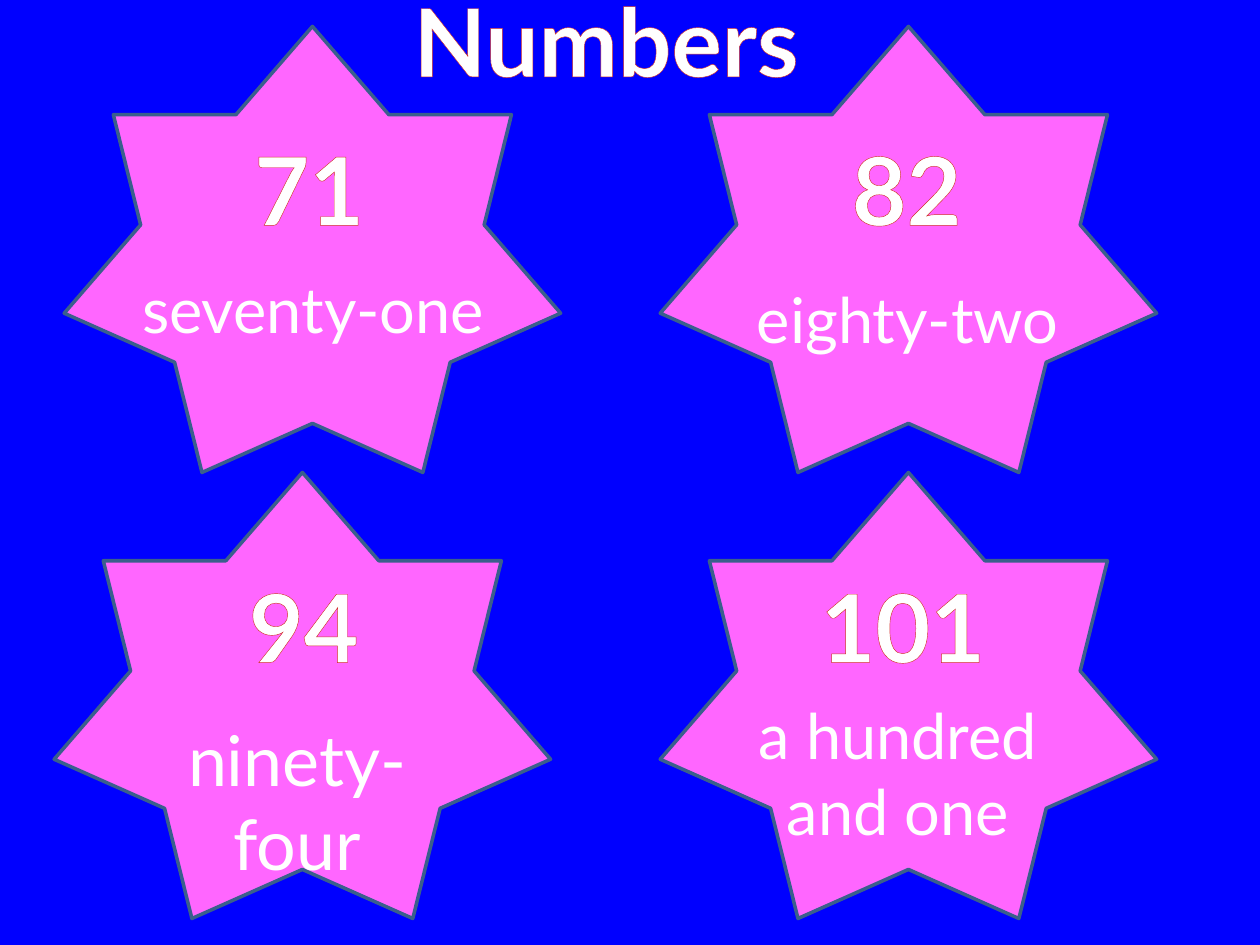
from lxml import etree
from pptx import Presentation
from pptx.dml.color import RGBColor
from pptx.enum.shapes import MSO_SHAPE
from pptx.enum.text import MSO_ANCHOR, MSO_AUTO_SIZE, PP_ALIGN
from pptx.oxml.ns import qn
from pptx.util import Inches, Pt

STAR = MSO_SHAPE.STAR_7_POINT
TOP = MSO_ANCHOR.TOP
GROW = MSO_AUTO_SIZE.SHAPE_TO_FIT_TEXT
CENTER = PP_ALIGN.CENTER

FONT = "Lato"
BLUE, PINK, STEEL = "0000FF", "FF66FF", "3A5F8C"
WHITE, RED = "FFFFFF", "D02F2A"
STAR_WIDTH, STAR_HEIGHT = 3.94, 3.54
HEADING_HEIGHT = 1.01
HEADING = {"size": 54, "bold": True, "outline": RED, "wrap": False}

# Star corner, then number (left, top, width) and words (left, top, width, height) within it
STARS = [
    ((0.51, 0.21), "71", (1.36, 0.78, 1.17), "seventy-one", (0.32, 1.89, 3.31, 1.31), 36),
    ((5.24, 0.21), "82", (1.25, 0.78, 1.41), "eighty-two", (0.47, 1.97, 2.99, 1.31), 36),
    ((0.43, 3.75), "94", (1.24, 0.71, 1.48), "ninety-four", (0.55, 1.89, 2.76, 1.45), 40),
    ((5.24, 3.75), "101", (1.13, 0.71, 1.59), "a hundred and one", (0.31, 1.73, 3.15, 1.31), 36),
]


def color(value):
    """Turn a hex string into a colour."""
    return RGBColor.from_string(value)


def place(shape, left, top, width, height):
    """Move and size a shape, in inches."""
    shape.left, shape.top = Inches(left), Inches(top)
    shape.width, shape.height = Inches(width), Inches(height)


def write(shape, text, size=36, bold=False, outline=None, wrap=True):
    """Fill a shape with one centred white line of text."""
    frame = shape.text_frame
    frame.word_wrap = wrap
    frame.auto_size = GROW
    frame.vertical_anchor = TOP
    paragraph = frame.paragraphs[0]
    paragraph.alignment = CENTER
    run = paragraph.add_run()
    run.text = text
    run.font.name = FONT
    run.font.size = Pt(size)
    run.font.bold = bold
    run.font.color.rgb = color(WHITE)
    if outline:
        line = etree.Element(qn("a:ln"), w=str(Pt(1.93)))
        fill = etree.SubElement(line, qn("a:solidFill"))
        etree.SubElement(fill, qn("a:srgbClr"), val=outline)
        run.font._element.insert(0, line)


def add_text(slide, box, text, **style):
    """Add a text box with formatted text."""
    write(slide.shapes.add_textbox(*map(Inches, box)), text, **style)


def add_title(slide, box, text):
    """Place and format the slide title."""
    title = slide.shapes.title
    place(title, *box)
    write(title, text, **HEADING)


def add_number_star(slide, corner, number, number_box, words, words_box, words_size):
    """Add a star holding a number and its name in words."""
    left, top = corner
    star = slide.shapes.add_shape(
        STAR, Inches(left), Inches(top), Inches(STAR_WIDTH), Inches(STAR_HEIGHT))
    star.shadow.inherit = False
    star.fill.solid()
    star.fill.fore_color.rgb = color(PINK)
    star.line.color.rgb = color(STEEL)
    star.line.width = Pt(2)
    dx, dy, width = number_box
    add_text(slide, (left + dx, top + dy, width, HEADING_HEIGHT), number, **HEADING)
    dx, dy, width, height = words_box
    add_text(slide, (left + dx, top + dy, width, height), words, size=words_size)


def main():
    """Build the numbers slide."""
    deck = Presentation()
    deck.slide_width, deck.slide_height = Inches(10), Inches(7.5)
    slide = deck.slides.add_slide(deck.slide_layouts[5])
    slide.background.fill.solid()
    slide.background.fill.fore_color.rgb = color(BLUE)
    add_title(slide, (2.87, -0.19, 3.88, HEADING_HEIGHT), "Numbers")
    for star in STARS:
        add_number_star(slide, *star)
    deck.save("out.pptx")


if __name__ == "__main__":
    main()
